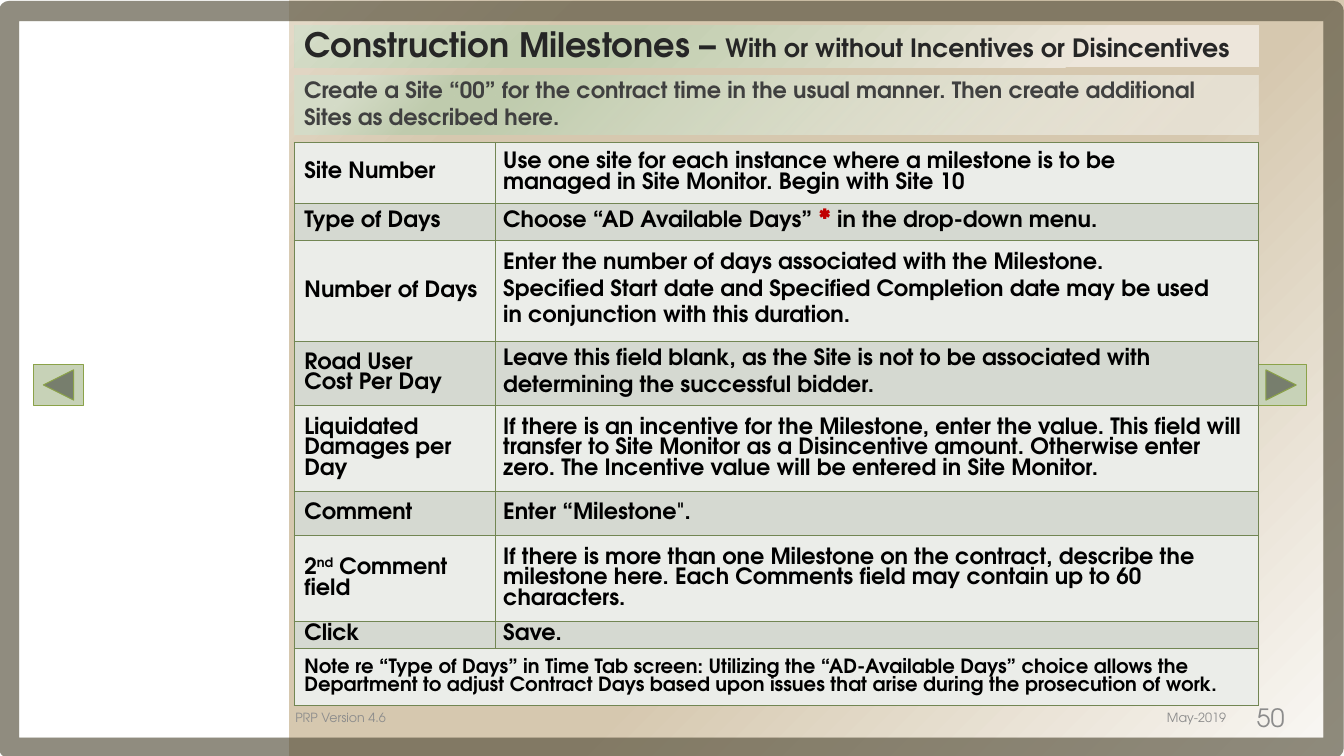
from dataclasses import dataclass

import pptx
import pptx.dml.color
import pptx.enum.shapes
import pptx.enum.text
import pptx.oxml
import pptx.oxml.ns
import pptx.util

Pt = pptx.util.Pt
RGB = pptx.dml.color.RGBColor.from_string
SHAPE = pptx.enum.shapes.MSO_SHAPE
ANCHOR = pptx.enum.text.MSO_ANCHOR
ALIGN = pptx.enum.text.PP_ALIGN
NS = pptx.oxml.ns.nsdecls("a")
qn = pptx.oxml.ns.qn


@dataclass(frozen=True)
class Theme:
    font: str = "TeX Gyre Adventor"
    title: int = 24
    subtitle: int = 18
    body: int = 16
    note: int = 14
    footer: int = 9
    black: str = "000000"
    title_ink: str = "262626"
    intro_ink: str = "404040"
    footer_ink: str = "8C8C8C"
    star: str = "C00000"
    frame: str = "59533F"
    border: str = "728653"
    button: str = "C7D2B7"
    button_edge: str = "8BA249"
    bands: tuple = ("EBEDE9", "D5D9D1")
    # (position, colour, opacity), all in percent
    sand: tuple = ((0, "FAF9F6", 100), (43, "D6C8AF", 100), (83, "D6C8AF", 100), (100, "E4DAC9", 100))
    title_band: tuple = ((17, "EDE6DB", 100), (67, "C0CDAE", 100), (75, "C0CDAE", 100), (100, "D5DDC9", 100))
    intro_band: tuple = ((10, "F8F9F6", 50), (77, "C0CDAE", 100), (84, "C0CDAE", 100), (93, "D5DDC9", 100))


THEME = Theme()
TIGHT = 14.7
NARROW = 13.2

# label, instruction paragraphs, row height, line spacing of label and instruction
MILESTONE_ROWS = [
    ("Site Number",
     ["Use one site for each instance where a milestone is to be\vmanaged in Site Monitor. Begin with Site 10"],
     43.4, TIGHT, TIGHT),
    ("Type of Days",
     [["Choose “AD Available Days” ", ("*", dict(size=THEME.subtitle, color=THEME.star)),
       " in the drop-down menu."]],
     26.5, TIGHT, TIGHT),
    ("Number of Days",
     ["Enter the number of days associated with the Milestone.",
      "Specified Start date and Specified Completion date may be used",
      "in conjunction with this duration."],
     72.4, TIGHT, NARROW),
    ("Road User\vCost Per Day",
     ["Leave this field blank, as the Site is not to be associated with",
      "determining the successful bidder."],
     45.6, TIGHT, NARROW),
    ("Liquidated Damages per Day",
     ["If there is an incentive for the Milestone, enter the value. This field will transfer to "
      "Site Monitor as a Disincentive amount. Otherwise enter zero. "
      "The Incentive value will be entered in Site Monitor."],
     61.7, TIGHT, TIGHT),
    ("Comment", ["Enter “Milestone\"."], 31.2, TIGHT, TIGHT),
    (["2", ("nd", dict(raised=30)), " Comment field"],
     ["If there is more than one Milestone on the contract, describe the milestone here. "
      "Each Comments field may contain up to 60 characters."],
     61.7, TIGHT, TIGHT),
    ("Click", ["Save."], 19, NARROW, NARROW),
]
NOTE = ("Note re “Type of Days” in Time Tab screen: Utilizing the “AD-Available Days” choice allows the "
        "Department to adjust Contract Days based upon issues that arise during the prosecution of work.")
NOTE_HEIGHT = 41


def format_run(run, size, color, bold, raised=0):
    run.font.name = THEME.font
    run.font.size = Pt(size)
    run.font.bold = bold
    run.font.color.rgb = RGB(color)
    if raised:
        run._r.get_or_add_rPr().set("baseline", str(raised * 1000))


def write(frame, paragraphs, size=THEME.body, color=THEME.black, bold=True, align=ALIGN.LEFT,
          line=None, gap=0):
    """Each paragraph is a string or a list of runs; a run may be (text, overrides); \\v breaks a line."""
    frame.word_wrap = True
    for number, runs in enumerate(paragraphs):
        paragraph = frame.add_paragraph() if number else frame.paragraphs[0]
        paragraph.alignment = align
        paragraph.space_before = Pt(gap if number else 0)
        if line:
            paragraph.line_spacing = Pt(line)
        for part in [runs] if isinstance(runs, str) else runs:
            text, overrides = (part, {}) if isinstance(part, str) else part
            for piece_number, piece in enumerate(text.split("\v")):
                if piece_number:
                    paragraph.add_line_break()
                run = paragraph.add_run()
                run.text = piece
                format_run(run, **(dict(size=size, color=color, bold=bold) | overrides))


def set_margins(target, left, top, right, bottom):
    target.margin_left, target.margin_top = Pt(left), Pt(top)
    target.margin_right, target.margin_bottom = Pt(right), Pt(bottom)


def add_preset(slide, preset, box):
    shape = slide.shapes.add_shape(preset, *map(Pt, box))
    shape.shadow.inherit = False
    shape.line.fill.background()
    return shape


def shade(shape, stops):
    """Fill with a gradient that runs from lower right to upper left."""
    shape.fill.gradient()
    shape.fill.gradient_angle = 135
    stop_list = next(shape.element.iter(qn("a:gsLst")))
    for old_stop in list(stop_list):
        stop_list.remove(old_stop)
    for position, color, opacity in stops:
        stop_list.append(pptx.oxml.parse_xml(
            f'<a:gs {NS} pos="{position * 1000}"><a:srgbClr val="{color}">'
            f'<a:alpha val="{opacity * 1000}"/></a:srgbClr></a:gs>'))


def add_backdrop(slide, box):
    left, top, width, height = box
    sand = add_preset(slide, SHAPE.RECTANGLE, (206.6, top, width - 206.6, height))
    shade(sand, THEME.sand)
    for _ in range(2):
        frame = add_preset(slide, SHAPE.RECTANGLE, (left + 6.5, top + 7.9, width - 13.9, height - 13.7))
        frame.fill.background()
        frame.line.color.rgb = RGB(THEME.frame)
        frame.line.width = Pt(14.5)
        ink = next(frame.line._ln.iter(qn("a:srgbClr")))
        ink.append(pptx.oxml.parse_xml(f'<a:alpha {NS} val="42000"/>'))
    for preset, x in ((SHAPE.ACTION_BUTTON_FORWARD_OR_NEXT, 897.1),
                      (SHAPE.ACTION_BUTTON_BACK_OR_PREVIOUS, 23.8)):
        button = add_preset(slide, preset, (left + x, top + 260.6, 36, 28.8))
        button.fill.solid()
        button.fill.fore_color.rgb = RGB(THEME.button)
        button.line.color.rgb = RGB(THEME.button_edge)
        button.line.width = Pt(0.75)


def add_heading(slide, box):
    """Title band with the introduction band below it."""
    left, top, width, height = box
    title = slide.shapes.title
    title.element.getparent().append(title.element)  # in front of the backdrop
    title.left, title.top, title.width, title.height = map(Pt, (left, top, width, 30.2))
    shade(title, THEME.title_band)
    title.text_frame.auto_size = pptx.enum.text.MSO_AUTO_SIZE.NONE
    title.text_frame.vertical_anchor = ANCHOR.MIDDLE
    set_margins(title.text_frame, 7.2, 0, 7.2, 3.6)
    write(title.text_frame, [["Construction Milestones – ",
                              ("With or without Incentives or Disincentives", dict(size=THEME.subtitle))]],
          size=THEME.title, color=THEME.title_ink)

    intro = add_preset(slide, SHAPE.RECTANGLE, (left, top + 36, width, height - 36))
    shade(intro, THEME.intro_band)
    intro.text_frame.vertical_anchor = ANCHOR.TOP
    set_margins(intro.text_frame, 7.2, 0, 7.2, 0)
    write(intro.text_frame, ["Create a Site “00” for the contract time in the usual manner. "
                             "Then create additional Sites as described here."],
          color=THEME.intro_ink, line=19.3)


def style_cell(cell, band, left_margin, right_margin):
    cell.vertical_anchor = ANCHOR.MIDDLE
    set_margins(cell, left_margin, 2.9, right_margin, 2.9)
    cell.fill.solid()
    cell.fill.fore_color.rgb = RGB(band)
    properties = cell._tc.get_or_add_tcPr()
    for index, side in enumerate("LRTB"):
        properties.insert(index, pptx.oxml.parse_xml(
            f'<a:ln{side} {NS} w="12700"><a:solidFill><a:srgbClr val="{THEME.border}"/>'
            f'</a:solidFill></a:ln{side}>'))


def add_milestone_table(slide, box):
    heights = [row[2] for row in MILESTONE_ROWS] + [NOTE_HEIGHT]
    table = slide.shapes.add_table(len(heights), 2, *map(Pt, box)).table
    table.first_row = table.horz_banding = False
    table.columns[0].width, table.columns[1].width = Pt(143.5), Pt(box[2] - 143.5)
    for index, height in enumerate(heights):
        table.rows[index].height = Pt(height)
        band = THEME.bands[index % 2]
        style_cell(table.cell(index, 0), band, 7.2, 0)
        style_cell(table.cell(index, 1), band, 5.8, 5.8)
    for index, (label, instruction, _, label_line, line) in enumerate(MILESTONE_ROWS):
        write(table.cell(index, 0).text_frame, [label], line=label_line)
        write(table.cell(index, 1).text_frame, instruction, line=line, gap=6)
    note = table.cell(len(MILESTONE_ROWS), 0)
    note.merge(table.cell(len(MILESTONE_ROWS), 1))
    write(note.text_frame, [NOTE], size=THEME.note, line=NARROW)


def add_footer(slide, box):
    left, top, width, height = box
    for text, x, part_width, size, align, anchor in (
            ("50", 678.2, 51.1, THEME.subtitle, ALIGN.CENTER, ANCHOR.BOTTOM),
            ("May-2019", 612, 67, THEME.footer, ALIGN.RIGHT, ANCHOR.MIDDLE),
            ("PRP Version 4.6", 0, 600, THEME.footer, ALIGN.LEFT, ANCHOR.MIDDLE)):
        part = slide.shapes.add_textbox(*map(Pt, (left + x, top, part_width, height)))
        part.text_frame.vertical_anchor = anchor
        write(part.text_frame, [text], size=size, color=THEME.footer_ink, bold=False, align=align)


def main():
    deck = pptx.Presentation()
    deck.slide_width, deck.slide_height = Pt(960), Pt(540)
    slide = deck.slides.add_slide(deck.slide_layouts[5])
    add_backdrop(slide, (0, 0, 960, 540))
    add_heading(slide, (210.2, 18, 689, 77.8))
    add_milestone_table(slide, (210.2, 101.8, 689, 402.5))
    add_footer(slide, (203.8, 498.2, 729.3, 28.8))
    deck.save("out.pptx")


if __name__ == "__main__":
    main()
